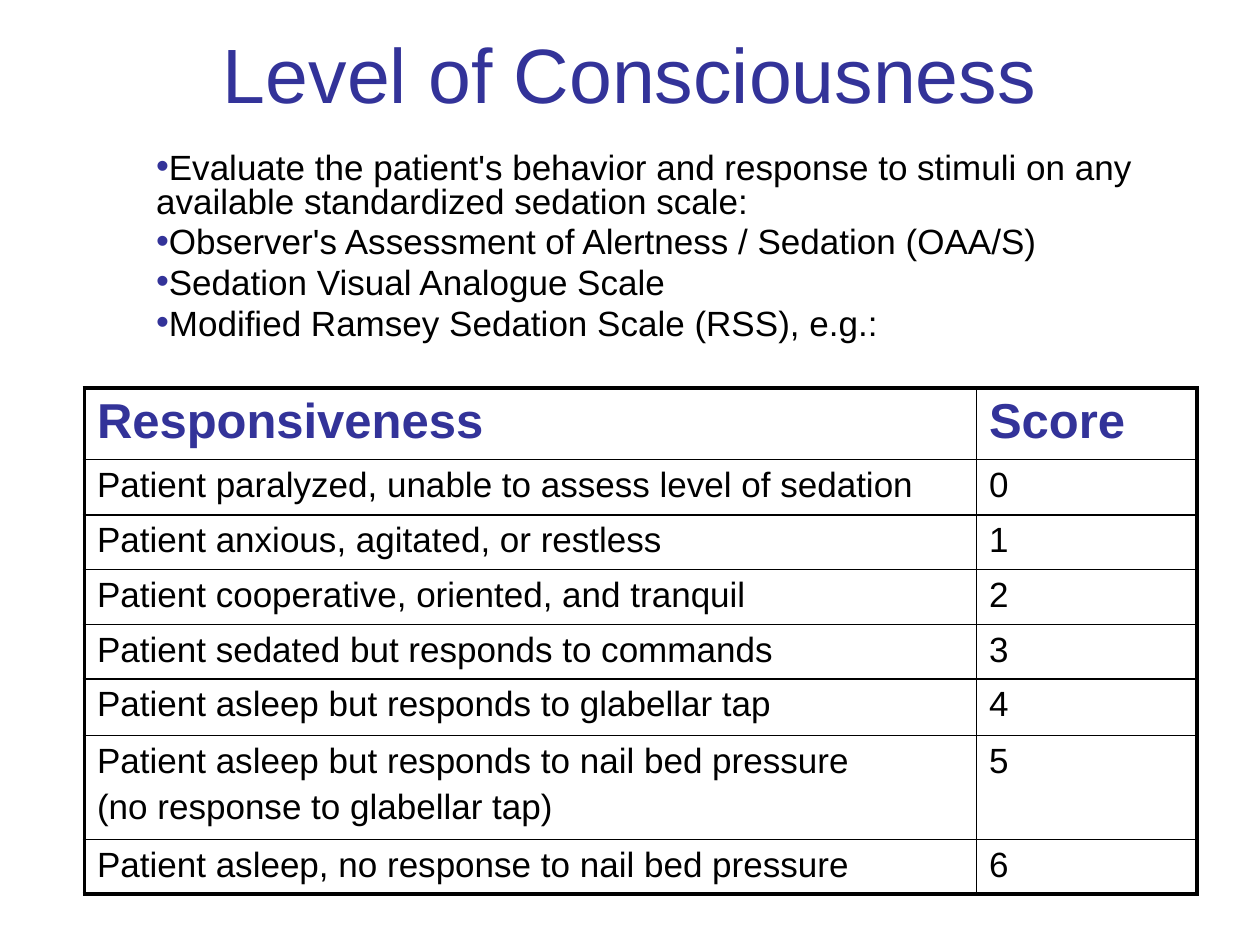
from lxml.etree import SubElement
from pptx import Presentation
from pptx.dml.color import RGBColor
from pptx.enum.text import MSO_ANCHOR, PP_ALIGN
from pptx.oxml import parse_xml
from pptx.oxml.ns import nsdecls, qn
from pptx.util import Inches, Pt

COLORS = {"accent": "333399", "text": "000000", "background": "FFFFFF"}
FONT = "Arial"
THIN, THICK = Pt(1), Pt(2.25)

SCALES = [
    "Evaluate the patient's behavior and response to stimuli on any available standardized sedation scale:",
    "Observer's Assessment of Alertness / Sedation (OAA/S)",
    "Sedation Visual Analogue Scale",
    "Modified Ramsey Sedation Scale (RSS), e.g.:",
]
SCORES = [
    ("Responsiveness", "Score", 0.54),
    ("Patient paralyzed, unable to assess level of sedation", "0", 0.44),
    ("Patient anxious, agitated, or restless", "1", 0.41),
    ("Patient cooperative, oriented, and tranquil", "2", 0.41),
    ("Patient sedated but responds to commands", "3", 0.41),
    ("Patient asleep but responds to glabellar tap", "4", 0.45),
    ("Patient asleep but responds to nail bed pressure\n(no response to glabellar tap)", "5", 0.77),
    ("Patient asleep, no response to nail bed pressure", "6", 0.41),
]


def style(paragraph, size, color, bold=False):
    font = paragraph.font
    font.name, font.size, font.bold = FONT, Pt(size), bold
    font.color.rgb = RGBColor.from_string(COLORS[color])


def add_bullet(paragraph, indent):
    properties = paragraph._p.get_or_add_pPr()
    properties.set("marL", str(indent))
    properties.set("indent", "0")
    color = SubElement(properties, qn("a:buClr"))
    SubElement(color, qn("a:srgbClr"), val=COLORS["accent"])
    SubElement(properties, qn("a:buSzPct"), val="105000")
    SubElement(properties, qn("a:buFont"), typeface=FONT)
    SubElement(properties, qn("a:buChar"), char="•")


def set_borders(cell, widths):
    properties = cell._tc.get_or_add_tcPr()
    for position, (side, width) in enumerate(widths.items()):
        properties.insert(position, parse_xml(
            f'<a:ln{side} {nsdecls("a")} w="{width}"><a:solidFill>'
            f'<a:srgbClr val="{COLORS["text"]}"/></a:solidFill></a:ln{side}>'))


def add_title(slide, left, top, width, height):
    frame = slide.shapes.add_textbox(left, top, width, height).text_frame
    frame.word_wrap = True
    frame.vertical_anchor = MSO_ANCHOR.MIDDLE
    heading = frame.paragraphs[0]
    heading.text = "Level of Consciousness"
    heading.alignment = PP_ALIGN.CENTER
    style(heading, 44, "accent")


def add_scales(slide, left, top, width, height):
    frame = slide.shapes.add_textbox(left, top, width, height).text_frame
    frame.word_wrap = True
    frame.text = "\n".join(SCALES)
    for scale in frame.paragraphs:
        add_bullet(scale, Inches(0.47))
        scale.line_spacing = 0.8
        scale.space_before = Pt(4)
        style(scale, 20, "text")


def add_scores(slide, left, top, width, height):
    table = slide.shapes.add_table(len(SCORES), 2, left, top, width, height).table
    score_width = Inches(1.75)
    table.columns[0].width = width - score_width
    table.columns[1].width = score_width
    last = len(SCORES) - 1
    for row, (*texts, row_height) in enumerate(SCORES):
        table.rows[row].height = Inches(row_height)
        for column, text in enumerate(texts):
            cell = table.cell(row, column)
            cell.text = text
            cell.fill.solid()
            cell.fill.fore_color.rgb = RGBColor.from_string(COLORS["background"])
            set_borders(cell, {
                "L": THICK if column == 0 else THIN,
                "R": THICK if column == 1 else THIN,
                "T": THICK if row == 0 else THIN,
                "B": THICK if row == last else THIN,
            })
            for index, line in enumerate(cell.text_frame.paragraphs):
                line.space_before = Pt(4 if index else 0)
                if row == 0:
                    style(line, 28, "accent", bold=True)
                else:
                    style(line, 20, "text")


def main():
    deck = Presentation()
    deck.slide_width, deck.slide_height = Inches(10), Inches(7.5)
    slide = deck.slides.add_slide(deck.slide_layouts[6])
    add_title(slide, Inches(0.5), Inches(0.08), Inches(9), Inches(1))
    add_scales(slide, Inches(0.67), Inches(1.17), Inches(8.75), Inches(1.75))
    add_scores(slide, Inches(0.67), Inches(3.08), Inches(8.83), Inches(3.84))
    deck.save("out.pptx")


if __name__ == "__main__":
    main()
